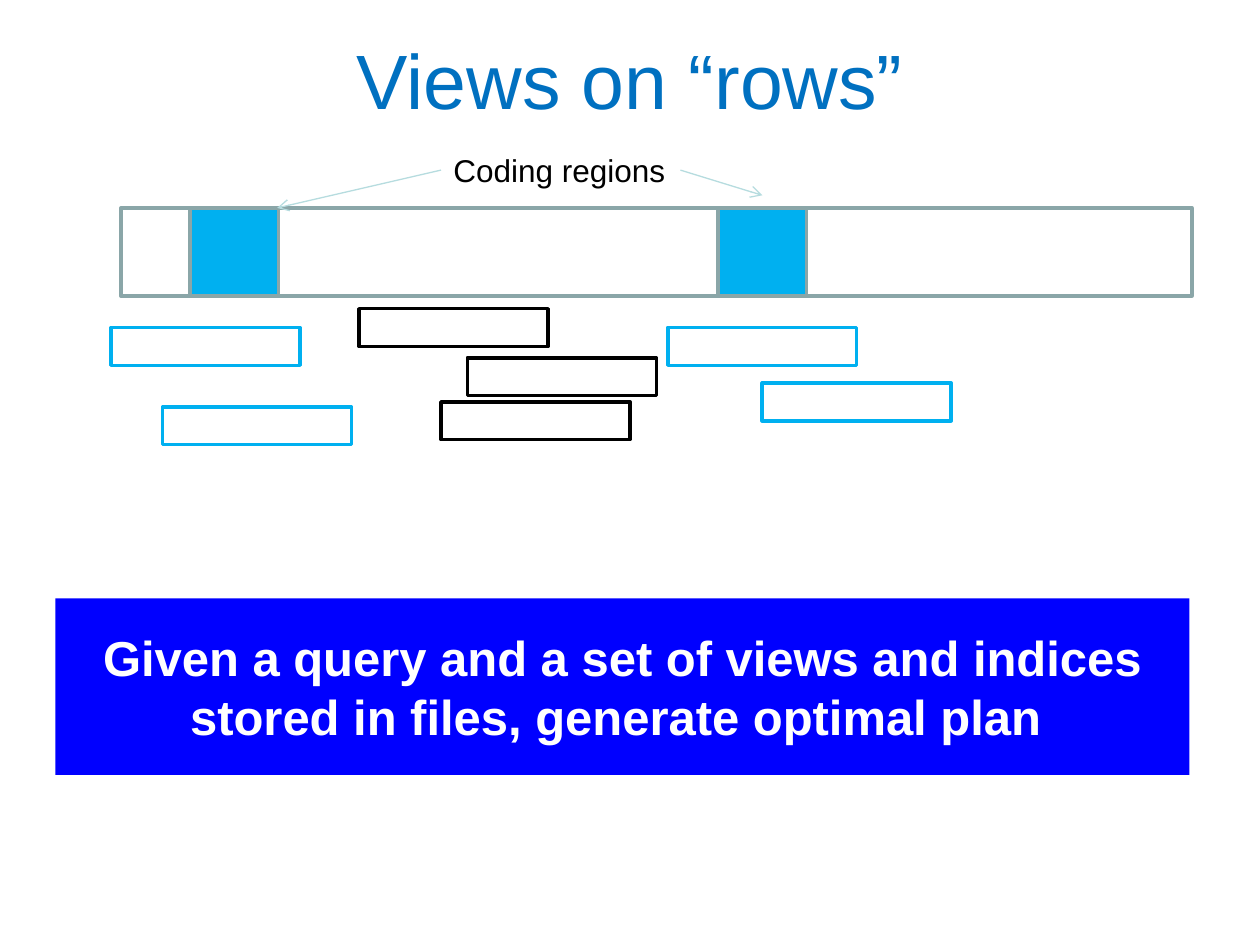
import dataclasses

import pptx
import pptx.dml.color
import pptx.enum.shapes
import pptx.enum.text
import pptx.oxml
import pptx.oxml.ns
import pptx.util

Inches = pptx.util.Inches
Pt = pptx.util.Pt
PP_ALIGN = pptx.enum.text.PP_ALIGN
MSO_ANCHOR = pptx.enum.text.MSO_ANCHOR


@dataclasses.dataclass(frozen=True)
class Theme:
    font: str = "Arial"
    title: str = "0070C0"
    paper: str = "FFFFFF"
    ink: str = "000000"
    coding: str = "00B0F0"
    outline: str = "8AA6A8"
    arrow: str = "B6DCDF"
    banner: str = "0000FF"
    title_size: int = 44
    label_size: int = 18
    banner_size: int = 28
    outline_width: float = 2
    arrow_width: float = 0.75


THEME = Theme()


def rgb(color):
    return pptx.dml.color.RGBColor.from_string(color)


def write(frame, text, size, color, align, **formats):
    frame.text = text
    paragraph = frame.paragraphs[0]
    paragraph.alignment = align
    font = paragraph.runs[0].font
    font.color.rgb = rgb(color)
    for name, value in {"name": THEME.font, "size": Pt(size), **formats}.items():
        setattr(font, name, value)


def add_box(slide, left, top, width, height, fill, line=None):
    box = slide.shapes.add_shape(
        pptx.enum.shapes.MSO_SHAPE.RECTANGLE, left, top, width, height)
    box.shadow.inherit = False
    box.fill.solid()
    box.fill.fore_color.rgb = rgb(fill)
    if line:
        box.line.color.rgb = rgb(line)
        box.line.width = Pt(THEME.outline_width)
    else:
        box.line.fill.background()
    return box


def add_arrow(slide, label, side, end_x, end_y):
    """Draw an arrow from the given side of the label to a point."""
    arrow = slide.shapes.add_connector(
        pptx.enum.shapes.MSO_CONNECTOR.STRAIGHT, 0, 0, end_x, end_y)
    arrow.begin_connect(label, side)
    arrow.line.color.rgb = rgb(THEME.arrow)
    arrow.line.width = Pt(THEME.arrow_width)
    head = pptx.oxml.parse_xml(
        f'<a:tailEnd {pptx.oxml.ns.nsdecls("a")} type="arrow"/>')
    arrow.line._get_or_add_ln().append(head)
    arrow._element.spPr.append(
        pptx.oxml.parse_xml(f'<a:effectLst {pptx.oxml.ns.nsdecls("a")}/>'))


def place_title(slide, left, top, width, height):
    title = slide.shapes.title
    title.left, title.top, title.width, title.height = left, top, width, height
    title.text_frame.vertical_anchor = MSO_ANCHOR.MIDDLE
    write(title.text_frame, "Views on “rows”", THEME.title_size, THEME.title,
          PP_ALIGN.CENTER)


def place_sequence(slide, left, top, width, height):
    """Draw the long row with its square coding regions."""
    add_box(slide, left, top, width, height, THEME.paper, THEME.outline)
    for offset in (0.55, 4.74):
        add_box(slide, left + Inches(offset), top, height, height,
                THEME.coding, THEME.outline)


def place_label(slide, left, top, width, height):
    label = slide.shapes.add_textbox(left, top, width, height)
    frame = label.text_frame
    frame.word_wrap = False
    frame.auto_size = pptx.enum.text.MSO_AUTO_SIZE.SHAPE_TO_FIT_TEXT
    write(frame, "Coding regions", THEME.label_size, THEME.ink, PP_ALIGN.LEFT)
    right = left + width
    add_arrow(slide, label, 1, left - Inches(1.3), top + Inches(0.5))
    add_arrow(slide, label, 3, right + Inches(0.65), top + Inches(0.4))


def place_reads(slide, left, top):
    """Scatter equal short rows, coloured by whether they meet a coding region."""
    reads = {
        THEME.coding: [(0, 0.15), (0.41, 0.78), (4.42, 0.15), (5.17, 0.59)],
        THEME.ink: [(1.97, 0), (2.83, 0.39), (2.62, 0.74)],
    }
    for color, offsets in reads.items():
        for across, down in offsets:
            add_box(slide, left + Inches(across), top + Inches(down),
                    Inches(1.5), Inches(0.3), THEME.paper, color)


def place_banner(slide, left, top, width, height):
    banner = add_box(slide, left, top, width, height, THEME.banner)
    frame = banner.text_frame
    frame.word_wrap = True
    frame.vertical_anchor = MSO_ANCHOR.MIDDLE
    write(frame, "Given a query and a set of views and indices stored in files, "
          "generate optimal plan ", THEME.banner_size, THEME.paper,
          PP_ALIGN.CENTER, bold=True)


def main():
    deck = pptx.Presentation()
    deck.slide_width, deck.slide_height = Inches(10), Inches(7.5)
    slide = deck.slides.add_slide(deck.slide_layouts.get_by_name("Title Only"))
    place_title(slide, Inches(0.5), Inches(0), Inches(9), Inches(1.25))
    place_sequence(slide, Inches(0.96), Inches(1.65), Inches(8.5), Inches(0.7))
    place_label(slide, Inches(3.5), Inches(1.15), Inches(1.9), Inches(0.4))
    place_reads(slide, Inches(0.88), Inches(2.45))
    place_banner(slide, Inches(0.44), Inches(4.75), Inches(9), Inches(1.4))
    deck.save("out.pptx")


if __name__ == "__main__":
    main()
